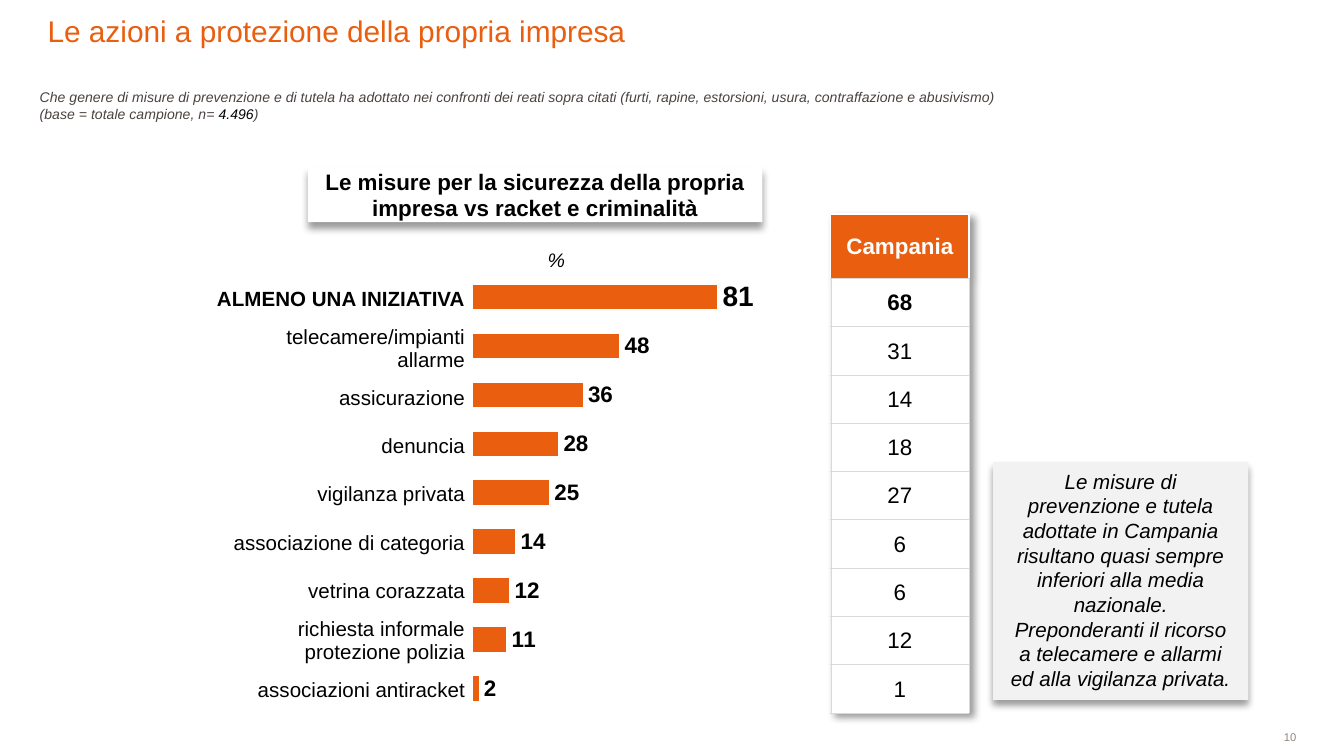
from lxml import etree
from pptx import Presentation
from pptx.chart.data import CategoryChartData
from pptx.dml.color import RGBColor
from pptx.enum.chart import XL_CHART_TYPE, XL_LABEL_POSITION
from pptx.enum.shapes import MSO_SHAPE
from pptx.enum.text import MSO_ANCHOR, PP_ALIGN
from pptx.oxml import parse_xml
from pptx.oxml.ns import nsdecls, qn
from pptx.util import Pt

LEFT, CENTER, RIGHT = PP_ALIGN.LEFT, PP_ALIGN.CENTER, PP_ALIGN.RIGHT
TOP, MIDDLE, BOTTOM = MSO_ANCHOR.TOP, MSO_ANCHOR.MIDDLE, MSO_ANCHOR.BOTTOM
BAR = XL_CHART_TYPE.BAR_CLUSTERED
OUTSIDE_END = XL_LABEL_POSITION.OUTSIDE_END
RECTANGLE = MSO_SHAPE.RECTANGLE

# Content
TITLE = "Le azioni a protezione della propria impresa"
QUESTION = (
    "Che genere di misure di prevenzione e di tutela ha adottato nei confronti dei reati "
    "sopra citati (furti, rapine, estorsioni, usura, contraffazione e abusivismo)\n"
    "(base = totale campione, n= 4.496)"
)
SAMPLE_SIZE = "4.496"
CHART_HEADING = "Le misure per la sicurezza della propria impresa vs racket e criminalità"
REGION = "Campania"
COMMENT = (
    "Le misure di prevenzione e tutela adottate in Campania risultano quasi sempre "
    "inferiori alla media nazionale. Preponderanti il ricorso a telecamere e allarmi "
    "ed alla vigilanza privata."
)
PAGE_NUMBER = "10"
MEASURES = [  # measure, bar value, Campania
    ("ALMENO UNA INIZIATIVA", 80, 68),
    ("telecamere/impianti\nallarme", 48, 31),
    ("assicurazione", 36, 14),
    ("denuncia", 28, 18),
    ("vigilanza privata", 25, 27),
    ("associazione di categoria", 14, 6),
    ("vetrina corazzata", 12, 6),
    ("richiesta informale\nprotezione polizia", 11, 12),
    ("associazioni antiracket", 2, 1),
]
FIRST_BAR_LABEL = "81"

THEME = {
    "font": "Arial", "chart_font": "Roboto",
    "orange": "E95E0F", "black": "000000", "white": "FFFFFF", "question": "4A423F",
    "page": "928580", "panel": "F2F2F2", "grid": "D9D9D9",
    "title_size": 16, "question_size": 7.5, "heading_size": 12, "unit_size": 10.5,
    "label_size": 11, "value_size": 12, "total_size": 15, "chart_size": 13.5, "page_size": 6,
}


def rgb(name):
    return RGBColor.from_string(THEME[name])


def style_font(font, size, color="black", bold=False, italic=False, face="font"):
    font.name, font.size = THEME[face], Pt(THEME[size])
    font.bold, font.italic = bold, italic
    font.color.rgb = rgb(color)


def write(frame, text, size, color="black", bold=False, italic=False, align=LEFT, emphasis=None):
    """Fill a text frame, one paragraph a line; the emphasis words turn black."""
    for index, line in enumerate(text.split("\n")):
        paragraph = frame.add_paragraph() if index else frame.paragraphs[0]
        paragraph.alignment = align
        before, found, after = line.partition(emphasis) if emphasis else (line, "", "")
        for part, part_color in ((before, color), (found, "black"), (after, color)):
            if part:
                run = paragraph.add_run()
                run.text = part
                style_font(run.font, size, part_color, bold, italic)


def set_frame(frame, anchor, inset):
    frame.word_wrap = True
    frame.vertical_anchor = anchor
    if not inset:
        frame.margin_left = frame.margin_right = frame.margin_top = frame.margin_bottom = 0


def add_text(slide, box, text, anchor=TOP, inset=True, **style):
    frame = slide.shapes.add_textbox(*map(Pt, box)).text_frame
    set_frame(frame, anchor, inset)
    write(frame, text, **style)


def add_shadow(effects, angle):
    shadow = etree.SubElement(effects, qn("a:outerShdw"), blurRad=str(Pt(4)), dist=str(Pt(3)),
                              dir=str(angle * 60000), algn="t", rotWithShape="0")
    color = etree.SubElement(shadow, qn("a:srgbClr"), val=THEME["black"])
    etree.SubElement(color, qn("a:alpha"), val="40000")


def add_panel(slide, box, text, fill, anchor, **style):
    panel = slide.shapes.add_shape(RECTANGLE, *map(Pt, box))
    panel.fill.solid()
    panel.fill.fore_color.rgb = rgb(fill)
    panel.line.fill.background()
    panel.shadow.inherit = False
    add_shadow(panel._element.spPr.find(qn("a:effectLst")), 90)
    set_frame(panel.text_frame, anchor, True)
    write(panel.text_frame, text, align=CENTER, **style)


def set_borders(cell, sides):
    """Draw borders given as (colour, width) for left, right, top and bottom."""
    properties = cell._tc.get_or_add_tcPr()
    for index, (tag, (color, width)) in enumerate(zip(("lnL", "lnR", "lnT", "lnB"), sides)):
        properties.insert(index, parse_xml(
            f'<a:{tag} {nsdecls("a")} w="{Pt(width)}"><a:solidFill>'
            f'<a:srgbClr val="{THEME[color]}"/></a:solidFill></a:{tag}>'))


def add_column(slide, left, top, width, heights):
    height = sum(heights)
    table = slide.shapes.add_table(len(heights), 1, *map(Pt, (left, top, width, height))).table
    table.first_row = table.horz_banding = False
    for row, row_height in zip(table.rows, heights):
        row.height = Pt(row_height)
    return table


def fill_cell(cell, text, fill=None, **style):
    cell.vertical_anchor = MIDDLE
    cell.margin_left = cell.margin_right = cell.margin_top = Pt(0.7)
    cell.margin_bottom = 0
    if fill:
        cell.fill.solid()
        cell.fill.fore_color.rgb = rgb(fill)
    else:
        cell.fill.background()
    write(cell.text_frame, text, **style)


def add_bars(slide, box):
    data = CategoryChartData(number_format="0")
    data.categories = [str(number) for number in range(1, len(MEASURES) + 1)]
    data.add_series("Series 1", [value for _, value, _ in MEASURES])
    chart = slide.shapes.add_chart(BAR, *map(Pt, box), data).chart
    chart.has_legend = chart.has_title = False
    style_font(chart.font, "chart_size", face="chart_font")
    chart.category_axis.visible = chart.value_axis.visible = False
    chart.category_axis.reverse_order = True
    scale = chart.value_axis
    scale.minimum_scale, scale.maximum_scale, scale.major_unit = 0, 100, 10
    scale.has_major_gridlines = False

    plot = chart.plots[0]
    plot.gap_width, plot.vary_by_categories = 100, False
    bars = plot.series[0]
    bars.format.fill.solid()
    bars.format.fill.fore_color.rgb = rgb("orange")
    first_label = bars.points[0].data_label
    write(first_label.text_frame, FIRST_BAR_LABEL, size="total_size", bold=True)
    first_label.position = OUTSIDE_END
    labels = bars.data_labels
    labels.show_value, labels.position = True, OUTSIDE_END
    labels.number_format, labels.number_format_is_linked = "0", False
    style_font(labels.font, "value_size", bold=True)

    area = chart._chartSpace.chart.plotArea
    for layout in area.findall(qn("c:layout")):
        area.remove(layout)
    layout = etree.Element(qn("c:layout"))
    manual = etree.SubElement(layout, qn("c:manualLayout"))
    for tag, value in (("layoutTarget", "inner"), ("xMode", "edge"), ("yMode", "edge"),
                       ("x", "0.282"), ("y", "0"), ("w", "0.496"), ("h", "1")):
        etree.SubElement(manual, qn(f"c:{tag}"), val=value)
    area.insert(0, layout)


def add_measure_names(slide):
    names = add_column(slide, 105, 147, 144.8, [25.9] * len(MEASURES))
    for row, (name, _, _) in enumerate(MEASURES):
        fill_cell(names.cell(row, 0), name, size="label_size", bold=row == 0, align=RIGHT)


def add_region(slide):
    region = add_column(slide, 445, 114.5, 74.2, [34.5] + [25.9] * len(MEASURES))
    grid, edge = ("grid", 0.25), ("white", 1)
    for row, text in enumerate([REGION] + [str(value) for _, _, value in MEASURES]):
        header = row == 0
        cell = region.cell(row, 0)
        fill_cell(cell, text, fill="orange" if header else "white", size="value_size",
                  color="white" if header else "black", bold=row < 2, align=CENTER)
        set_borders(cell, (edge, edge, edge, grid) if header else (grid,) * 4)
    effects = etree.Element(qn("a:effectLst"))
    add_shadow(effects, 45)
    region._tbl.tblPr.insert(0, effects)


def main():
    deck = Presentation()
    deck.slide_width, deck.slide_height = Pt(720), Pt(405)
    slide = deck.slides.add_slide(deck.slide_layouts[6])
    add_text(slide, (598, 391.5, 96.5, 6.5), PAGE_NUMBER, MIDDLE, inset=False,
             size="page_size", color="page", align=RIGHT)
    add_bars(slide, (160, 146, 330.5, 236))
    add_text(slide, (14.2, 44, 532, 25), QUESTION, size="question_size", color="question",
             italic=True, emphasis=SAMPLE_SIZE)
    add_panel(slide, (165, 89.5, 243.5, 29.5), CHART_HEADING, "white", MIDDLE,
              size="heading_size", bold=True)
    add_text(slide, (287.5, 132.5, 21, 13), "%", MIDDLE, inset=False,
             size="unit_size", italic=True, align=CENTER)
    add_text(slide, (25.5, -0.7, 590, 26.5), TITLE, BOTTOM, inset=False,
             size="title_size", color="orange")
    add_region(slide)
    add_measure_names(slide)
    add_panel(slide, (532, 247.5, 136.8, 127.5), COMMENT, "panel", TOP,
              size="label_size", italic=True)
    deck.save("out.pptx")


if __name__ == "__main__":
    main()
